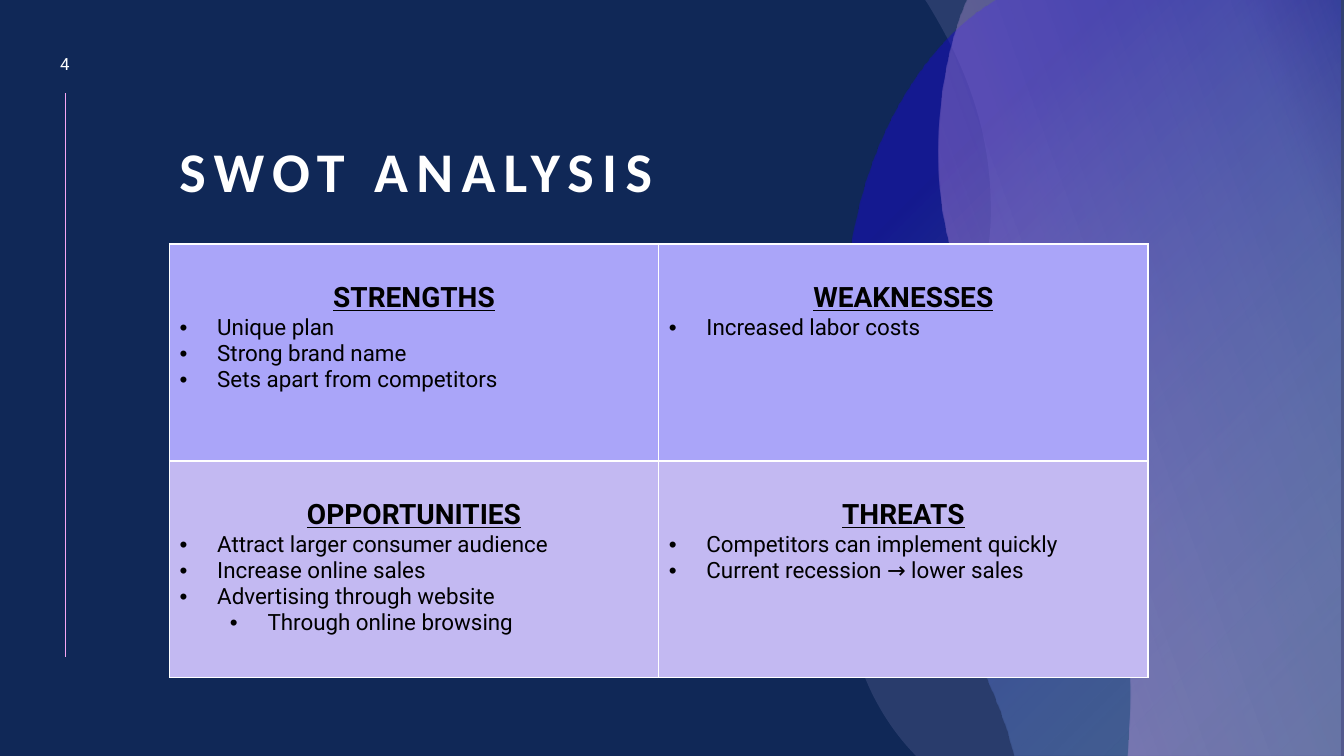
from lxml import etree
from pptx import Presentation
from pptx.dml.color import RGBColor
from pptx.enum.shapes import MSO_CONNECTOR
from pptx.enum.text import MSO_ANCHOR, PP_ALIGN
from pptx.oxml import parse_xml
from pptx.oxml.ns import nsdecls, qn
from pptx.util import Cm, Pt

NAVY = RGBColor(0x10, 0x28, 0x57)
WHITE = RGBColor(0xFF, 0xFF, 0xFF)
BLACK = RGBColor(0, 0, 0)
PINK = RGBColor(0xF6, 0xA6, 0xF4)
LAVENDER = RGBColor(0xC3, 0xB9, 0xF2)
PERIWINKLE = RGBColor(0xAA, 0xA5, 0xF9)
SKY = RGBColor(0x92, 0xCD, 0xF0)
ULTRAMARINE = RGBColor(0x18, 0x0D, 0xC2)

# Wave outlines are in inches, drawn on a grid of thousandths
GRID = 1000
GRID_STEP = Cm(2.54) / GRID

# Pairs are corners, sixes are Bezier segments
PALE_WAVE = [
    (9.18, 0), (13.34, 0), (13.34, 7.5), (9.09, 7.5), (9.08, 7.49),
    (8.7, 7.1, 8.38, 6.48, 8.39, 5.68), (8.4, 4.27, 9.8, 3.66, 9.83, 2.15),
    (9.85, 1.21, 9.5, 0.52, 9.2, 0.03)]
BLUE_WAVE = [
    (9.88, 0), (13.3, 0), (13.3, 7.5), (10.06, 7.5), (10.01, 7.31),
    (9.56, 5.83, 8.4, 4.92, 8.39, 3.22), (8.38, 1.65, 9.09, 0.55, 9.73, 0.1)]
PINK_WAVE = [
    (9.59, 0), (13.34, 0), (13.34, 7.5), (11.18, 7.5), (11.2, 7.21),
    (11.21, 7.08, 11.21, 6.94, 11.21, 6.81),
    (11.17, 4.58, 9.32, 3.68, 9.31, 1.59), (9.3, 1.06, 9.38, 0.59, 9.52, 0.18)]

# Each quadrant: heading, then (level, bullet text)
SWOT = [
    [("STRENGTHS", [(0, "Unique plan"), (0, "Strong brand name"),
                    (0, "Sets apart from competitors")]),
     ("WEAKNESSES", [(0, "Increased labor costs")])],
    [("OPPORTUNITIES", [(0, "Attract larger consumer audience"),
                        (0, "Increase online sales"),
                        (0, "Advertising through website"),
                        (1, "Through online browsing")]),
     ("THREATS", [(0, "Competitors can implement quickly"),
                  (0, "Current recession → lower sales")])],
]


def write(paragraph, text, size, color, font="Roboto", bold=False,
          underline=False, align=PP_ALIGN.LEFT, tracking=0):
    paragraph.alignment = align
    run = paragraph.add_run()
    run.text = text
    run.font.size = Pt(size)
    run.font.name = font
    run.font.bold = bold
    run.font.underline = underline
    run.font.color.rgb = color
    if tracking:
        run.font._element.set("spc", str(tracking * 100))


def color_xml(color, alpha):
    return (f'<a:srgbClr val="{color}"><a:alpha val="{alpha * 1000}"/>'
            '</a:srgbClr>')


def solid(color, alpha):
    return f'<a:solidFill {nsdecls("a")}>{color_xml(color, alpha)}</a:solidFill>'


def gradient(stops, direction):
    stops_xml = "".join(f'<a:gs pos="{place * 1000}">{color_xml(color, alpha)}</a:gs>'
                        for place, color, alpha in stops)
    return (f'<a:gradFill {nsdecls("a")} rotWithShape="1">'
            f'<a:gsLst>{stops_xml}</a:gsLst>{direction}</a:gradFill>')


def add_wave(slide, outline, turn, fill_xml):
    """Draw the outline as a shape turned by 90 or 270 degrees."""
    xs, ys = zip(*(segment[-2:] for segment in outline))
    center_x, center_y = (min(xs) + max(xs)) / 2, (min(ys) + max(ys)) / 2
    sign = 1 if turn == 90 else -1

    def unturn(x, y):
        return (round((center_x + sign * (y - center_y)) * GRID),
                round((center_y - sign * (x - center_x)) * GRID))

    corners = [unturn(*segment[-2:]) for segment in outline]
    left, top = (min(values) for values in zip(*corners))
    builder = slide.shapes.build_freeform(*corners[0], scale=GRID_STEP)
    builder.add_line_segments(corners[1:], close=True)
    wave = builder.convert_to_shape()

    # Bend the straight segments that have control points
    for line, segment in zip(list(wave.element.iter(qn("a:lnTo"))), outline[1:]):
        if len(segment) == 6:
            curve = etree.Element(qn("a:cubicBezTo"))
            for x, y in zip(segment[::2], segment[1::2]):
                u, v = unturn(x, y)
                etree.SubElement(curve, qn("a:pt"), x=str(u - left), y=str(v - top))
            line.getparent().replace(line, curve)

    wave.rotation = turn
    wave.shadow.inherit = False
    wave.line.fill.background()
    wave.fill.background()
    no_fill = wave.element.spPr.find(qn("a:noFill"))
    wave.element.spPr.replace(no_fill, parse_xml(fill_xml))


def add_backdrop(slide):
    slide.background.fill.solid()
    slide.background.fill.fore_color.rgb = NAVY
    add_wave(slide, PALE_WAVE, 270, solid(LAVENDER, 14))
    add_wave(slide, BLUE_WAVE, 90, gradient(
        [(4, SKY, 24), (79, ULTRAMARINE, 52)],
        '<a:path path="circle"><a:fillToRect l="100000" t="100000"/></a:path>'))
    add_wave(slide, PINK_WAVE, 90, gradient(
        [(1, PINK, 38), (84, LAVENDER, 20), (100, PINK, 3)],
        f'<a:lin ang="{250 * 60000}" scaled="0"/>'))


def add_margin_rule(slide, x, top, bottom):
    rule = slide.shapes.add_connector(MSO_CONNECTOR.STRAIGHT, x, top, x, bottom)
    rule.line.color.rgb = PINK
    rule.line.width = Pt(0.5)
    etree.SubElement(rule.element.spPr, qn("a:effectLst"))


def add_label(slide, box, text, anchor, line_spacing=1.0, space_after=0, **style):
    frame = slide.shapes.add_textbox(*box).text_frame
    frame.word_wrap = True
    frame.vertical_anchor = anchor
    paragraph = frame.paragraphs[0]
    paragraph.line_spacing = line_spacing
    paragraph.space_after = Pt(space_after)
    write(paragraph, text, **style)


def add_bullet(paragraph, level):
    paragraph.level = level
    properties = paragraph._p.get_or_add_pPr()
    properties.set("marL", str(Cm(0.95 + 1.27 * level)))
    properties.set("indent", str(-Cm(0.95)))
    etree.SubElement(properties, qn("a:buFont"), typeface="Arial")
    etree.SubElement(properties, qn("a:buChar"), char="•")


def set_borders(cell, bottom_width):
    widths = {"lnL": 1, "lnR": 1, "lnT": 1, "lnB": bottom_width}
    for place, (side, width) in enumerate(widths.items()):
        cell._tc.get_or_add_tcPr().insert(place, parse_xml(
            f'<a:{side} {nsdecls("a")} w="{Pt(width)}">{solid(WHITE, 100)}</a:{side}>'))


def add_swot_table(slide, box):
    table = slide.shapes.add_table(2, 2, *box).table
    table.first_row = table.horz_banding = False
    for r, (quadrants, shade, bottom_width) in enumerate(
            zip(SWOT, (PERIWINKLE, LAVENDER), (2, 1))):
        for c, (heading, points) in enumerate(quadrants):
            cell = table.cell(r, c)
            cell.fill.solid()
            cell.fill.fore_color.rgb = shade
            set_borders(cell, bottom_width)
            cell.margin_top = Cm(0.95)
            frame = cell.text_frame
            write(frame.paragraphs[0], heading, size=20, color=BLACK, bold=True,
                  underline=True, align=PP_ALIGN.CENTER)
            for level, point in points:
                paragraph = frame.add_paragraph()
                write(paragraph, point, size=16, color=BLACK)
                add_bullet(paragraph, level)


def main():
    deck = Presentation()
    deck.slide_width, deck.slide_height = Cm(33.87), Cm(19.05)
    slide = deck.slides.add_slide(deck.slide_layouts[6])
    left, width = Cm(4.27), Cm(24.66)

    add_margin_rule(slide, Cm(1.65), Cm(2.35), Cm(16.56))
    add_backdrop(slide)
    add_label(slide, (Cm(0.91), Cm(1.17), Cm(1.45), Cm(0.86)), "4",
              MSO_ANCHOR.MIDDLE, space_after=6, size=12, color=WHITE,
              align=PP_ALIGN.CENTER)
    add_label(slide, (left, Cm(2.31), width, Cm(2.97)), "SWOT ANALYSIS",
              MSO_ANCHOR.BOTTOM, line_spacing=0.9, size=40, color=WHITE,
              font="Calibri", bold=True, tracking=6)
    add_swot_table(slide, (left, Cm(6.15), width, Cm(10.92)))
    deck.save("out.pptx")


if __name__ == "__main__":
    main()
